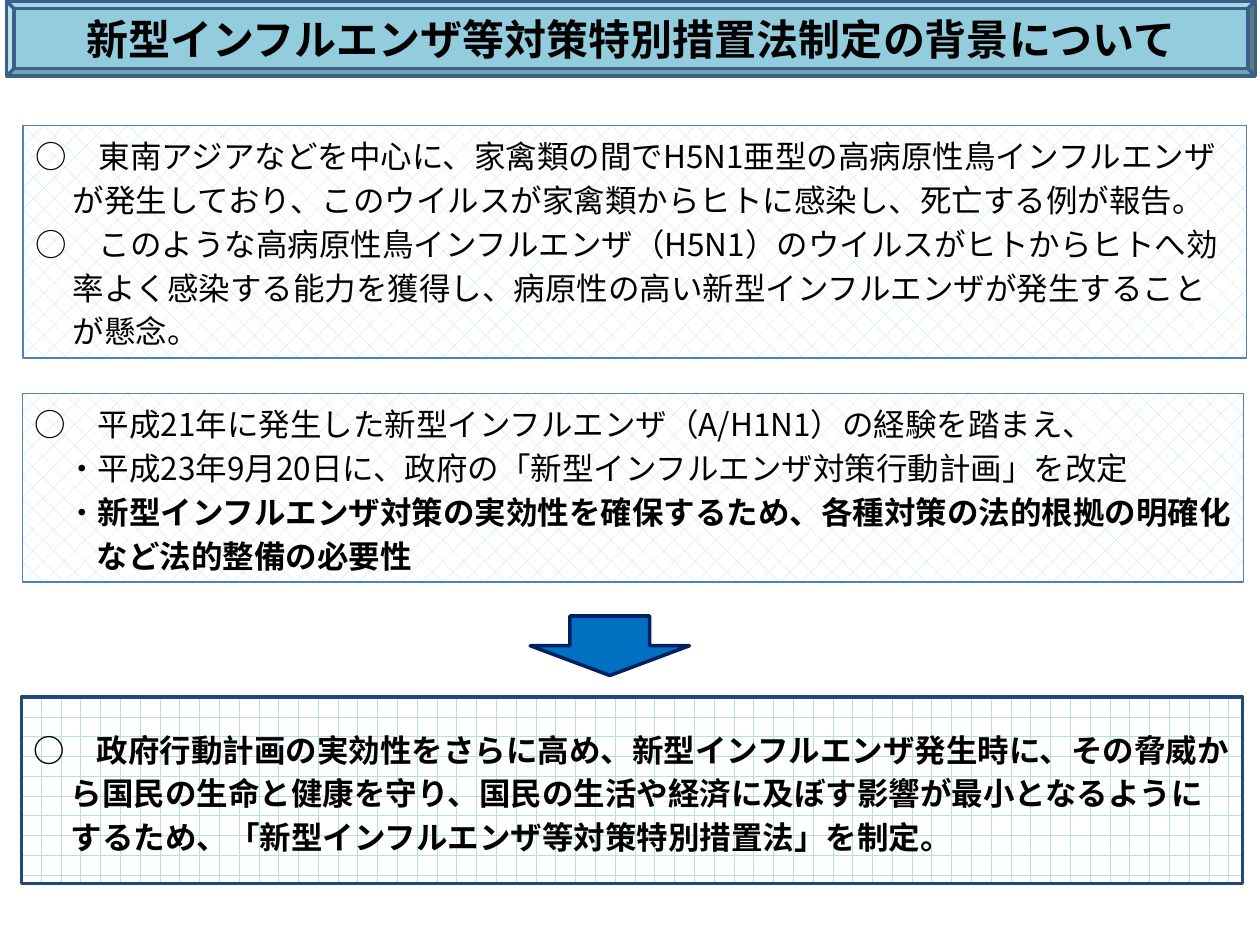
from lxml import etree
from pptx import Presentation
from pptx.dml.color import RGBColor
from pptx.enum.dml import MSO_PATTERN
from pptx.enum.shapes import MSO_SHAPE
from pptx.enum.text import MSO_ANCHOR, PP_ALIGN
from pptx.oxml.ns import qn
from pptx.util import Pt

DIAMONDS, GRID = MSO_PATTERN.DOTTED_DIAMOND, MSO_PATTERN.DOTTED_GRID
TOP, MIDDLE = MSO_ANCHOR.TOP, MSO_ANCHOR.MIDDLE
LEFT, CENTER = PP_ALIGN.LEFT, PP_ALIGN.CENTER

BLACK = RGBColor(0x00, 0x00, 0x00)
WHITE = RGBColor(0xFF, 0xFF, 0xFF)
PALE_BLUE = RGBColor(0xB7, 0xDE, 0xE8)
BANNER_BLUE = RGBColor(0x93, 0xCD, 0xDD)
BANNER_LINE = RGBColor(0x3A, 0x5F, 0x8C)
BOX_LINE = RGBColor(0x4F, 0x81, 0xBD)
CONCLUSION_LINE = RGBColor(0x1F, 0x49, 0x7D)
ARROW_BLUE = RGBColor(0x00, 0x70, 0xC0)
ARROW_LINE = RGBColor(0x00, 0x20, 0x60)

JAPANESE_FONT = "Noto Sans CJK JP"
INDENT, DEEP_INDENT = 21.25, 35.4
LINE_SPACING = 25

# Content: a paragraph is (hanging indent, [(text, latin font, bold), ...])
TITLE = "新型インフルエンザ等対策特別措置法制定の背景について"
BACKGROUND = [
    (INDENT, [("○　東南アジアなどを中心に、家禽類の間でH5N1亜型の高病原性鳥インフルエンザが発生しており、"
               "このウイルスが家禽類からヒトに感染し、死亡する例が報告。", JAPANESE_FONT, False)]),
    (INDENT, [("○　このような高病原性鳥インフルエンザ（H5N1）のウイルスがヒトからヒトへ効率よく感染する能力を獲得し、"
               "病原性の高い新型インフルエンザが発生することが懸念。", JAPANESE_FONT, False)]),
]
EXPERIENCE = [
    (INDENT, [("○　平成21年に発生した新型インフルエンザ（A/H1N1）の経験を踏まえ、", JAPANESE_FONT, False)]),
    (INDENT, [("　・平成23年9月20日に、政府の「新型インフルエンザ対策行動計画」を改定", JAPANESE_FONT, False)]),
    (DEEP_INDENT, [("　・", JAPANESE_FONT, False),
                   ("新型インフルエンザ対策の実効性を確保するため、各種対策の法的根拠の明確化など法的整備の必要性",
                    "Arial", True)]),
]
CONCLUSION = [
    (INDENT, [("○　政府行動計画の実効性をさらに高め、新型インフルエンザ発生時に、その脅威から国民の生命と健康を守り、"
               "国民の生活や経済に及ぼす影響が最小となるようにするため、"
               "「新型インフルエンザ等対策特別措置法」を制定。", JAPANESE_FONT, True)]),
]

# Boxes: (left, top, width, height), pattern, line colour, line width, anchor, paragraphs
BOXES = [
    ((13.2, 71.6, 699, 133), DIAMONDS, BOX_LINE, 0.75, TOP, BACKGROUND),
    ((12.8, 224.7, 698, 108), DIAMONDS, BOX_LINE, 0.75, TOP, EXPERIENCE),
    ((12.2, 398.3, 698, 106.5), GRID, CONCLUSION_LINE, 2, MIDDLE, CONCLUSION),
]


def add_shape(slide, kind, bounds, line_color, line_width):
    shape = slide.shapes.add_shape(kind, *(Pt(length) for length in bounds))
    shape.shadow.inherit = False
    shape.line.color.rgb = line_color
    shape.line.width = Pt(line_width)
    return shape


def add_run(paragraph, text, font_name, size, bold):
    run = paragraph.add_run()
    run.text = text
    font = run.font
    font.size, font.bold, font.name = Pt(size), bold, font_name
    font.color.rgb = BLACK
    east_asian = etree.Element(qn("a:ea"), typeface=JAPANESE_FONT)
    run._r.get_or_add_rPr().find(qn("a:latin")).addnext(east_asian)


def add_box(slide, bounds, pattern, line_color, line_width, anchor, paragraphs):
    box = add_shape(slide, MSO_SHAPE.RECTANGLE, bounds, line_color, line_width)
    box.fill.patterned()
    box.fill.pattern = pattern
    box.fill.fore_color.rgb = PALE_BLUE
    box.fill.back_color.rgb = WHITE
    frame = box.text_frame
    frame.word_wrap = True
    frame.vertical_anchor = anchor
    for index, (indent, runs) in enumerate(paragraphs):
        paragraph = frame.add_paragraph() if index else frame.paragraphs[0]
        paragraph.alignment = LEFT
        paragraph.line_spacing = Pt(LINE_SPACING)
        properties = paragraph._p.get_or_add_pPr()
        properties.set("marL", str(Pt(indent)))
        properties.set("indent", str(-Pt(indent)))
        for text, font_name, bold in runs:
            add_run(paragraph, text, font_name, 18, bold)


def main():
    presentation = Presentation()
    presentation.slide_width, presentation.slide_height = Pt(720), Pt(540)
    slide = presentation.slides.add_slide(presentation.slide_layouts[6])

    # Title banner
    banner = add_shape(slide, MSO_SHAPE.BEVEL, (3.8, 0.7, 713.5, 42.7), BANNER_LINE, 2)
    banner.adjustments[0] = 0.1
    banner.fill.solid()
    banner.fill.fore_color.rgb = BANNER_BLUE
    banner.text_frame.word_wrap = True
    banner.text_frame.vertical_anchor = MIDDLE
    heading = banner.text_frame.paragraphs[0]
    heading.alignment = CENTER
    add_run(heading, TITLE, "Calibri", 24, True)

    # Text boxes
    for box in BOXES:
        add_box(slide, *box)

    # Arrow down to the conclusion
    arrow = add_shape(slide, MSO_SHAPE.DOWN_ARROW, (303, 352, 91, 34), ARROW_LINE, 2)
    arrow.fill.solid()
    arrow.fill.fore_color.rgb = ARROW_BLUE

    presentation.save("out.pptx")


if __name__ == "__main__":
    main()
